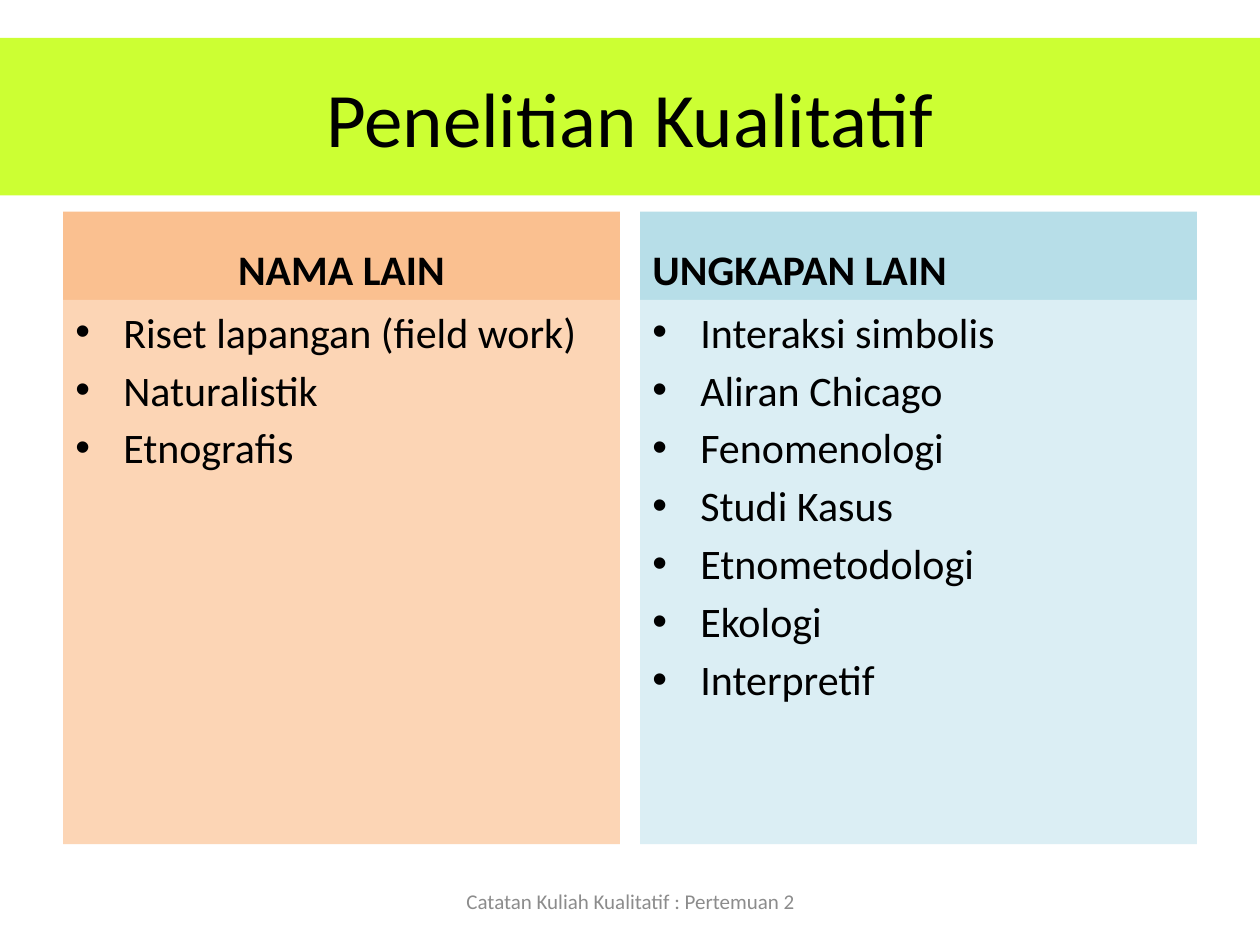
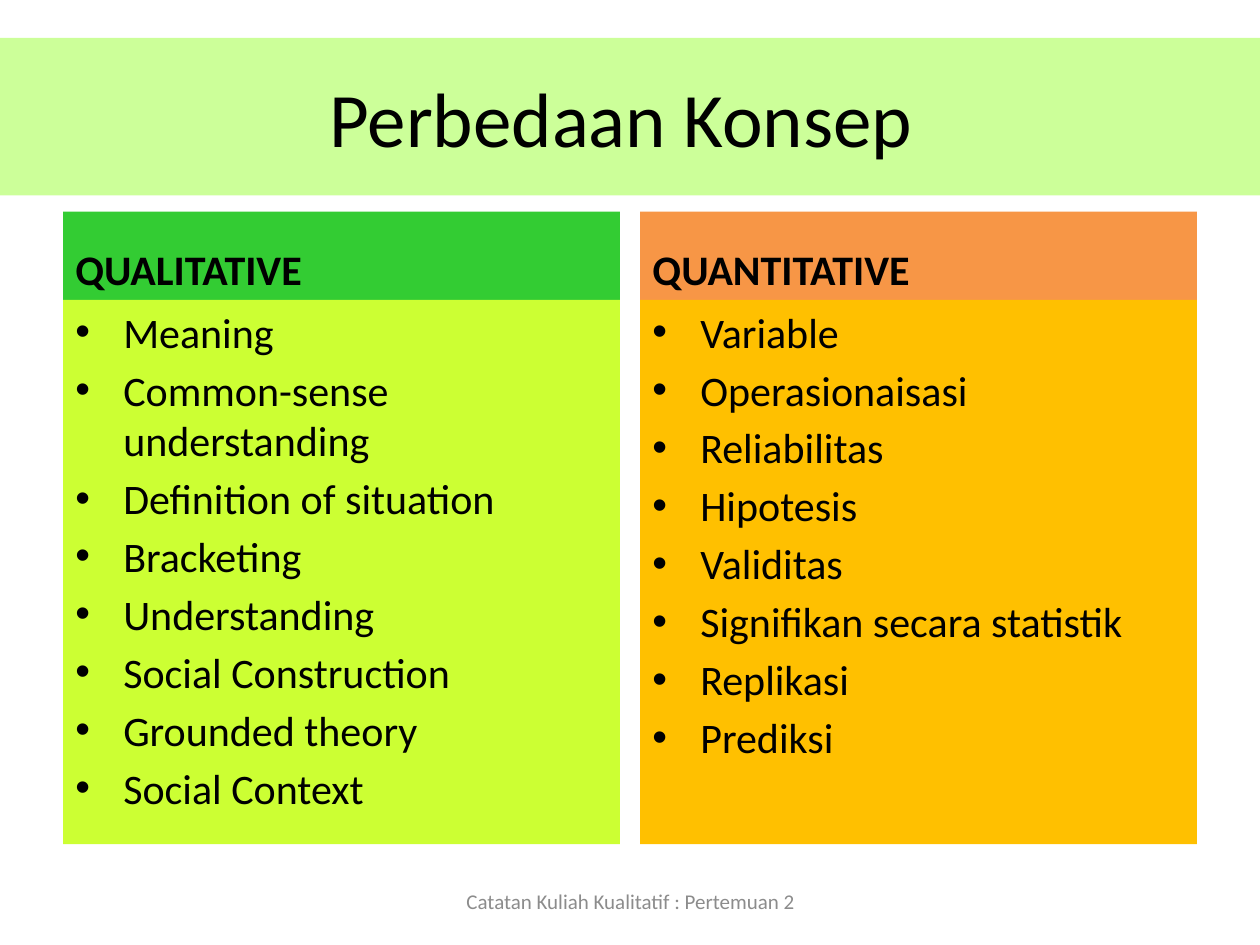
from lxml import etree
from pptx import Presentation
from pptx.dml.color import RGBColor
from pptx.enum.shapes import MSO_SHAPE
from pptx.enum.text import MSO_ANCHOR, MSO_AUTO_SIZE, PP_ALIGN
from pptx.oxml.ns import qn
from pptx.util import Inches, Pt

RECT = MSO_SHAPE.RECTANGLE
TOP, MID, LOW = MSO_ANCHOR.TOP, MSO_ANCHOR.MIDDLE, MSO_ANCHOR.BOTTOM
LEFT, MIDST = PP_ALIGN.LEFT, PP_ALIGN.CENTER
FIXED = MSO_AUTO_SIZE.NONE

WIDTH, HEIGHT = 10, 7.5
EDGE, COL = 0.5, 4.42
HEAD_TOP, HEAD_TALL, LIST_TALL = 1.68, 0.7, 4.32
INDENT = 0.38
FOOT = "Catatan Kuliah Kualitatif : Pertemuan 2"

SLIDES = [
    ("Penelitian Kualitatif", "CCFF33", [
        ("NAMA LAIN", MIDST, "FAC090", "FCD5B5",
         ["Riset lapangan (field work)", "Naturalistik", "Etnografis"]),
        ("UNGKAPAN LAIN", LEFT, "B7DEE8", "DBEEF4",
         ["Interaksi simbolis", "Aliran Chicago", "Fenomenologi",
          "Studi Kasus", "Etnometodologi", "Ekologi", "Interpretif"]),
    ]),
    ("Perbedaan Konsep ", "CCFF99", [
        ("QUALITATIVE", LEFT, "33CC33", "CCFF33",
         ["Meaning", "Common-sense understanding", "Definition of situation",
          "Bracketing", "Understanding", "Social Construction",
          "Grounded theory", "Social Context"]),
        ("QUANTITATIVE", LEFT, "F79646", "FFC000",
         ["Variable", "Operasionaisasi", "Reliabilitas", "Hipotesis",
          "Validitas", "Signifikan secara statistik", "Replikasi",
          "Prediksi"]),
    ]),
]


def color(code):
    return RGBColor.from_string(code)


def assign(item, values):
    for name, value in values.items():
        setattr(item, name, value)


class Deck:
    """Holds the shared style and the current slide."""

    font = "Calibri"
    ink = "000000"
    gray = "8C8C8C"

    def __init__(self):
        self.show = Presentation()
        assign(self.show, {"slide_width": Inches(WIDTH),
                           "slide_height": Inches(HEIGHT)})

    def start(self, text, fill):
        self.slide = self.show.slides.add_slide(self.show.slide_layouts[5])
        title = self.slide.shapes.title
        assign(title, {"left": Inches(0), "top": Inches(0.3),
                       "width": Inches(WIDTH), "height": Inches(1.25)})
        self.paint(title, fill)
        self.letter(title, [text], 44, MID, MIDST)

    def paint(self, shape, fill):
        shape.fill.solid()
        shape.fill.fore_color.rgb = color(fill)

    def letter(self, shape, lines, size, anchor, align, ink=ink, bold=False):
        frame = shape.text_frame
        assign(frame, {"word_wrap": True, "auto_size": FIXED,
                       "vertical_anchor": anchor})
        frame.text = "\n".join(lines)
        for para in frame.paragraphs:
            para.alignment = align
            for run in para.runs:
                assign(run.font, {"name": self.font, "size": Pt(size),
                                  "bold": bold})
                run.font.color.rgb = color(ink)

    def panel(self, box, fill, lines, anchor, align, bold=False):
        shape = self.slide.shapes.add_shape(RECT, *map(Inches, box))
        shape.shadow.inherit = False
        shape.line.fill.background()
        self.paint(shape, fill)
        self.letter(shape, lines, 24, anchor, align, bold=bold)
        return shape

    def bullets(self, box, fill, lines):
        shape = self.panel(box, fill, lines, TOP, LEFT)
        for para in shape.text_frame.paragraphs:
            para.space_after = Pt(4.3)
            props = para._p.get_or_add_pPr()
            props.set("marL", str(Inches(INDENT)))
            props.set("indent", str(-Inches(INDENT)))
            etree.SubElement(props, qn("a:buFont")).set("typeface", "Arial")
            etree.SubElement(props, qn("a:buChar")).set("char", "•")

    def column(self, left, head, align, dark, light, lines):
        self.panel((left, HEAD_TOP, COL, HEAD_TALL), dark, [head], LOW,
                   align, True)
        self.bullets((left, HEAD_TOP + HEAD_TALL, COL, LIST_TALL), light,
                     lines)

    def footer(self):
        box = self.slide.shapes.add_textbox(
            *map(Inches, (3.42, 6.95, 3.17, 0.4)))
        self.letter(box, [FOOT], 12, MID, MIDST, self.gray)


def main():
    deck = Deck()
    for title, fill, columns in SLIDES:
        deck.start(title, fill)
        for left, column in zip((EDGE, WIDTH - EDGE - COL), columns):
            deck.column(left, *column)
        deck.footer()
    deck.show.save("out.pptx")


if __name__ == "__main__":
    main()
